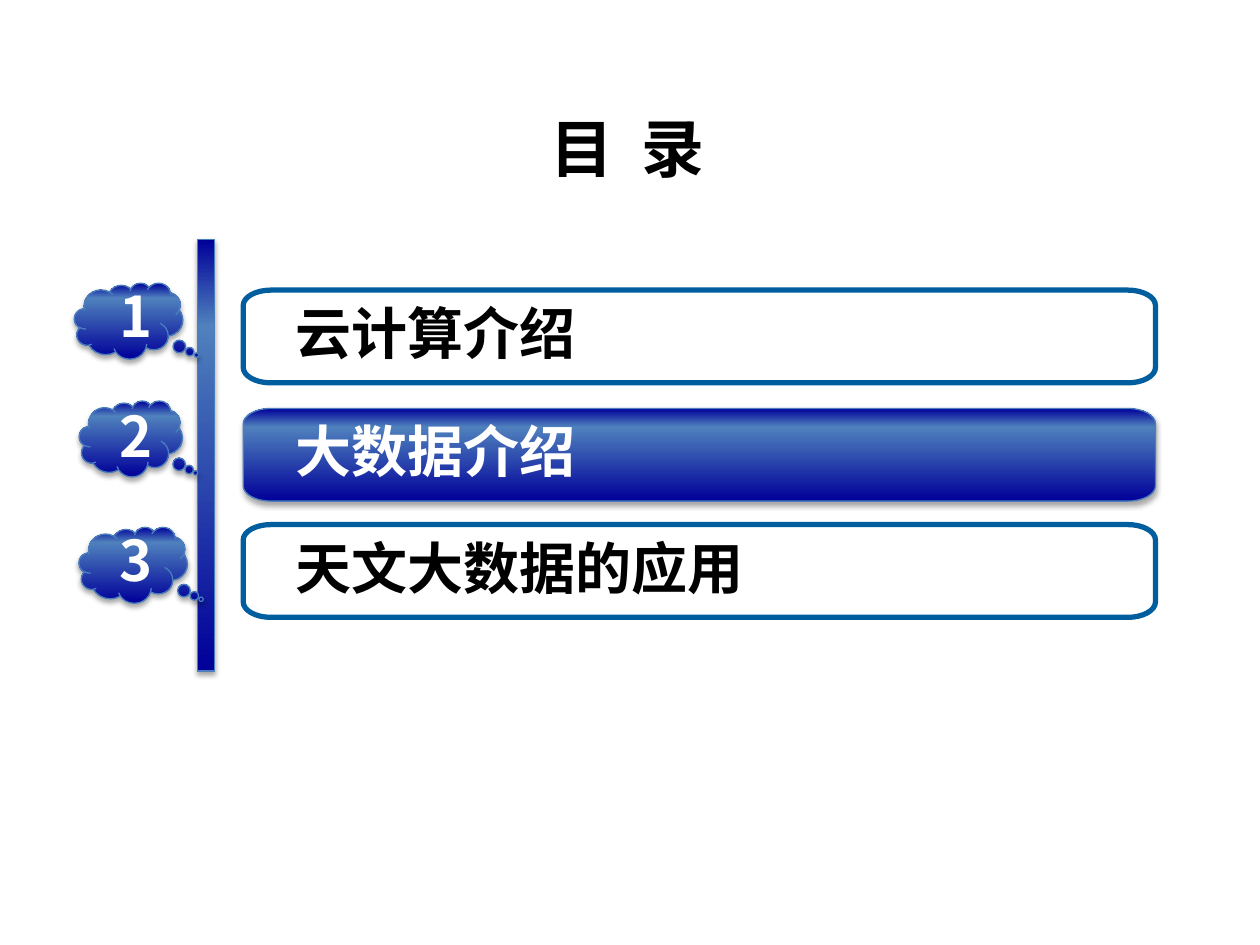
from lxml import etree
from pptx import Presentation
from pptx.dml.color import RGBColor
from pptx.enum.shapes import MSO_SHAPE
from pptx.enum.text import MSO_ANCHOR, MSO_AUTO_SIZE, PP_ALIGN
from pptx.oxml.ns import qn
from pptx.util import Pt

RECTANGLE, CLOUD = MSO_SHAPE.RECTANGLE, MSO_SHAPE.CLOUD_CALLOUT
TOP, MIDDLE = MSO_ANCHOR.TOP, MSO_ANCHOR.MIDDLE
LEFT, CENTER = PP_ALIGN.LEFT, PP_ALIGN.CENTER
GROW = MSO_AUTO_SIZE.SHAPE_TO_FIT_TEXT

NAVY = RGBColor(0x00, 0x00, 0x99)
STEEL = RGBColor(0x4F, 0x81, 0xBD)
EDGE = RGBColor(0x4B, 0x7E, 0xBC)
FRAME = RGBColor(0x00, 0x5E, 0x9E)
BLACK = RGBColor(0x00, 0x00, 0x00)
WHITE = RGBColor(0xFF, 0xFF, 0xFF)

FONT = "Noto Sans CJK SC"
ITEM_TEXT = {"size": Pt(32), "bold": True, "name": FONT}
TITLE_TEXT = {"size": Pt(36), "bold": True, "name": FONT}
ITEM_PARA = {"line_spacing": 0.9, "space_after": Pt(11)}
ROUNDNESS = 0.55  # pull of a curve's handles towards the corner


def add_child(parent, tag, **values):
    return etree.SubElement(parent, qn(tag), values)


def style_glossy(shape):
    """Navy and steel gradient, thin edge and a soft shadow below."""
    shape.fill.gradient()
    shape.fill.gradient_angle = 90
    stops = shape._element.spPr.find(qn("a:gradFill")).find(qn("a:gsLst"))
    for stop in list(stops):
        stops.remove(stop)
    for place, color in ((0, NAVY), (80, STEEL), (100, NAVY)):
        stop = add_child(stops, "a:gs", pos=str(place * 1000))
        add_child(stop, "a:srgbClr", val=str(color))
    shape.line.color.rgb = EDGE
    shape.line.width = Pt(0.75)
    shape.shadow.inherit = False
    effects = shape._element.spPr.find(qn("a:effectLst"))
    shadow = add_child(effects, "a:outerShdw", blurRad=str(Pt(3.1)),
                       dist=str(Pt(1.8)), dir="5400000", rotWithShape="0")
    shade = add_child(shadow, "a:srgbClr", val=str(BLACK))
    add_child(shade, "a:alpha", val="35000")


def style_outlined(shape):
    shape.fill.background()
    shape.line.color.rgb = FRAME
    shape.line.width = Pt(3)
    shape.shadow.inherit = False


def write(shape, text, color, font, para_format, frame_format):
    frame = shape.text_frame
    for name, value in frame_format.items():
        setattr(frame, name, value)
    para = frame.paragraphs[0]
    for name, value in para_format.items():
        setattr(para, name, value)
    span = para.add_run()
    span.text = text
    for name, value in font.items():
        setattr(span.font, name, value)
    span.font.color.rgb = color
    properties = span._r.get_or_add_rPr()
    add_child(properties, "a:ea", typeface=FONT)
    return properties


def add_glossy(page, kind, left, top, width, height):
    shape = page.shapes.add_shape(kind, Pt(left), Pt(top), Pt(width), Pt(height))
    style_glossy(shape)
    return shape


def add_title(page, text, left, top, width, height):
    box = page.shapes.add_textbox(Pt(left), Pt(top), Pt(width), Pt(height))
    properties = write(
        box, text, BLACK, TITLE_TEXT,
        {"alignment": CENTER, "line_spacing": Pt(32)},
        {"word_wrap": True, "auto_size": GROW, "margin_left": Pt(9.4),
         "margin_right": Pt(9.4), "margin_top": Pt(5), "margin_bottom": Pt(5)})
    properties.set("spc", "400")  # wide-set heading


def build_panel(page, left, top, width, height):
    """Outline whose corners are quarter ellipses, wider than tall."""
    radius_x, radius_y = 15.8, 8.8
    right, bottom = left + width, top + height
    # each corner: where its curve starts, its vertex, where its curve ends
    corners = (
        ((left, top + radius_y), (left, top), (left + radius_x, top)),
        ((right - radius_x, top), (right, top), (right, top + radius_y)),
        ((right, bottom - radius_y), (right, bottom), (right - radius_x, bottom)),
        ((left + radius_x, bottom), (left, bottom), (left, bottom - radius_y)))
    points = [(Pt(x), Pt(y)) for start, _, end in corners for x, y in (start, end)]
    builder = page.shapes.build_freeform(*points[0])
    builder.add_line_segments(points[1:], close=True)
    panel = builder.convert_to_shape()

    # turn the straight cut at each corner into a curve
    cuts = list(panel._element.iter(qn("a:lnTo")))[::2]
    for cut, (start, vertex, end) in zip(cuts, corners):
        curve = etree.Element(qn("a:cubicBezTo"))
        handles = [[a + ROUNDNESS * (b - a) for a, b in zip(point, vertex)]
                   for point in (start, end)]
        for x, y in (*handles, end):
            add_child(curve, "a:pt", x=str(Pt(x - left)), y=str(Pt(y - top)))
        cut.getparent().replace(cut, curve)
    return panel


def add_panel(page, text, active, left, top, width, height):
    panel = build_panel(page, left, top, width, height)
    (style_glossy if active else style_outlined)(panel)
    write(panel, text, WHITE if active else BLACK, ITEM_TEXT,
          {"alignment": LEFT, **ITEM_PARA},
          {"word_wrap": True, "vertical_anchor": MIDDLE, "margin_left": Pt(30),
           "margin_right": Pt(30), "margin_top": Pt(6), "margin_bottom": Pt(6)})


def add_cloud(page, left, top, width, height):
    cloud = add_glossy(page, CLOUD, left, top, width, height)
    cloud.adjustments[0] = 0.626
    cloud.adjustments[1] = 0.45


def add_number(page, text, left, top, width, height):
    box = page.shapes.add_textbox(Pt(left), Pt(top), Pt(width), Pt(height))
    write(box, text, WHITE, ITEM_TEXT, {"alignment": CENTER, **ITEM_PARA},
          {"word_wrap": False, "auto_size": GROW, "vertical_anchor": TOP})


def add_contents(page, items, left, top, width, height):
    """Upright bar, then a numbered cloud and a panel for each item."""
    add_glossy(page, RECTANGLE, left + 70.5, top, 9.7, height)
    for number, item in enumerate(items, 1):
        text, active, panel_top, cloud_left, cloud_top, cloud_width, number_top = item
        add_panel(page, text, active, left + 96.5, top + panel_top,
                  width - 96.5, 53)
        add_cloud(page, left + cloud_left, top + cloud_top, cloud_width, 43.4)
        add_number(page, str(number), left + 18.2, top + number_top, 34.6, 42.5)


def main():
    deck = Presentation()
    deck.slide_width, deck.slide_height = Pt(720), Pt(540)
    page = deck.slides.add_slide(deck.slide_layouts[6])
    add_title(page, "目 录", -1.2, 69, 719.5, 42)
    # text, active, panel top, cloud left, cloud top, cloud width, number top
    items = (("云计算介绍", False, 28.8, 0, 24.7, 62, 24.7),
             ("大数据介绍", True, 96.4, 2.8, 92, 59, 93.2),
             ("天文大数据的应用", False, 162.8, 2.6, 164.2, 62, 164.2))
    add_contents(page, items, 42.5, 137, 617.8, 246.5)
    deck.save("out.pptx")


if __name__ == "__main__":
    main()
